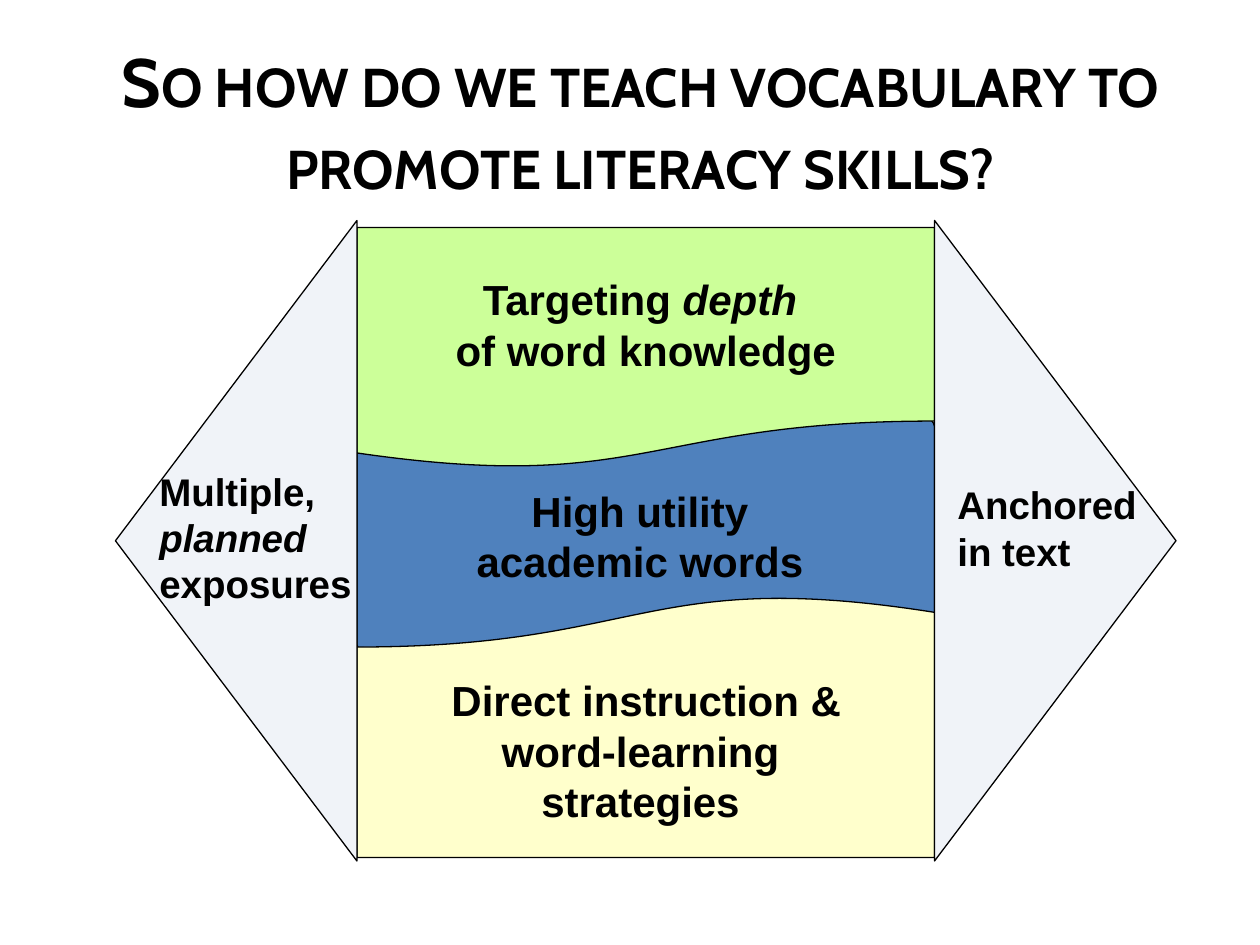
from pptx import Presentation
from pptx.dml.color import RGBColor
from pptx.enum.shapes import MSO_SHAPE
from pptx.enum.text import MSO_ANCHOR, PP_ALIGN
from pptx.util import Pt

TAPE = MSO_SHAPE.FLOWCHART_PUNCHED_TAPE
DOCUMENT = MSO_SHAPE.FLOWCHART_DOCUMENT
TRIANGLE = MSO_SHAPE.ISOSCELES_TRIANGLE
TOP, MIDDLE = MSO_ANCHOR.TOP, MSO_ANCHOR.MIDDLE
LEFT, CENTER = PP_ALIGN.LEFT, PP_ALIGN.CENTER

BLACK = RGBColor(0x00, 0x00, 0x00)
BLUE = RGBColor(0x4F, 0x81, 0xBD)
GREEN = RGBColor(0xCC, 0xFF, 0x99)
YELLOW = RGBColor(0xFF, 0xFF, 0xCC)
PALE = RGBColor(0xF0, 0xF3, 0xF8)

TITLE = "So how do we teach vocabulary to promote literacy skills?"

COLUMN_LEFT, COLUMN_WIDTH = 204, 330
COLUMN_RIGHT = COLUMN_LEFT + COLUMN_WIDTH
ARROW_SPAN, ARROW_DEPTH, ARROW_MIDDLE = 366, 138, 309

# Each paragraph is a list of (text, italic) runs.
BANDS = [
    (TAPE, 228, 156, 0, BLUE,
     [[("High utility ", False)], [("academic words ", False)]]),
    (DOCUMENT, 130, 138, 0, GREEN,
     [[("Targeting ", False), ("depth ", True)], [("of word knowledge", False)]]),
    (DOCUMENT, 340, 150, 180, YELLOW, []),
]
ARROWS = [
    (COLUMN_LEFT - ARROW_DEPTH / 2, 270),
    (COLUMN_RIGHT + ARROW_DEPTH / 2, 90),
]
LABELS = [
    ((222, 382, 288, 94), 24, CENTER,
     [[(" Direct instruction & word-learning strategies", False)]]),
    ((540, 271.5, 132, 60), 22, LEFT, [[("Anchored in text", False)]]),
    ((84, 264, 132, 86), 22, LEFT,
     [[("Multiple, ", False), ("planned", True)], [("exposures", False)]]),
]


def write(shape, paragraphs, size, alignment, anchor, wrap, font_name="Arial"):
    frame = shape.text_frame
    frame.word_wrap = wrap
    frame.vertical_anchor = anchor
    for index, runs in enumerate(paragraphs):
        paragraph = frame.add_paragraph() if index else frame.paragraphs[0]
        paragraph.alignment = alignment
        font = paragraph.font
        font.name, font.size, font.bold = font_name, Pt(size), True
        font.color.rgb = BLACK
        for text, italic in runs:
            run = paragraph.add_run()
            run.text = text
            if italic:
                run.font.italic = True


def add_outlined(slide, kind, box, rotation, color):
    shape = slide.shapes.add_shape(kind, *map(Pt, box))
    shape.rotation = rotation
    shape.shadow.inherit = False
    shape.fill.solid()
    shape.fill.fore_color.rgb = color
    shape.line.color.rgb = BLACK
    shape.line.width = Pt(0.75)
    return shape


def add_label(slide, box, paragraphs, size, alignment, anchor=TOP, font_name="Arial"):
    label = slide.shapes.add_textbox(*map(Pt, box))
    write(label, paragraphs, size, alignment, anchor, True, font_name)
    return label


def main():
    presentation = Presentation()
    presentation.slide_width, presentation.slide_height = Pt(720), Pt(540)
    slide = presentation.slides.add_slide(presentation.slide_layouts[6])

    title = add_label(slide, (42, 24, 648, 90), [[(TITLE, False)]], 39, CENTER,
                      MIDDLE, "Cabin")
    title_run = title.text_frame.paragraphs[0].runs[0]
    title_run._r.get_or_add_rPr().set("cap", "small")

    for kind, top, height, rotation, color, paragraphs in BANDS:
        box = (COLUMN_LEFT, top, COLUMN_WIDTH, height)
        band = add_outlined(slide, kind, box, rotation, color)
        write(band, paragraphs, 24, CENTER, MIDDLE, False)

    for center, rotation in ARROWS:
        box = (center - ARROW_SPAN / 2, ARROW_MIDDLE - ARROW_DEPTH / 2,
               ARROW_SPAN, ARROW_DEPTH)
        add_outlined(slide, TRIANGLE, box, rotation, PALE)

    for box, size, alignment, paragraphs in LABELS:
        add_label(slide, box, paragraphs, size, alignment)

    presentation.save("out.pptx")


if __name__ == "__main__":
    main()
